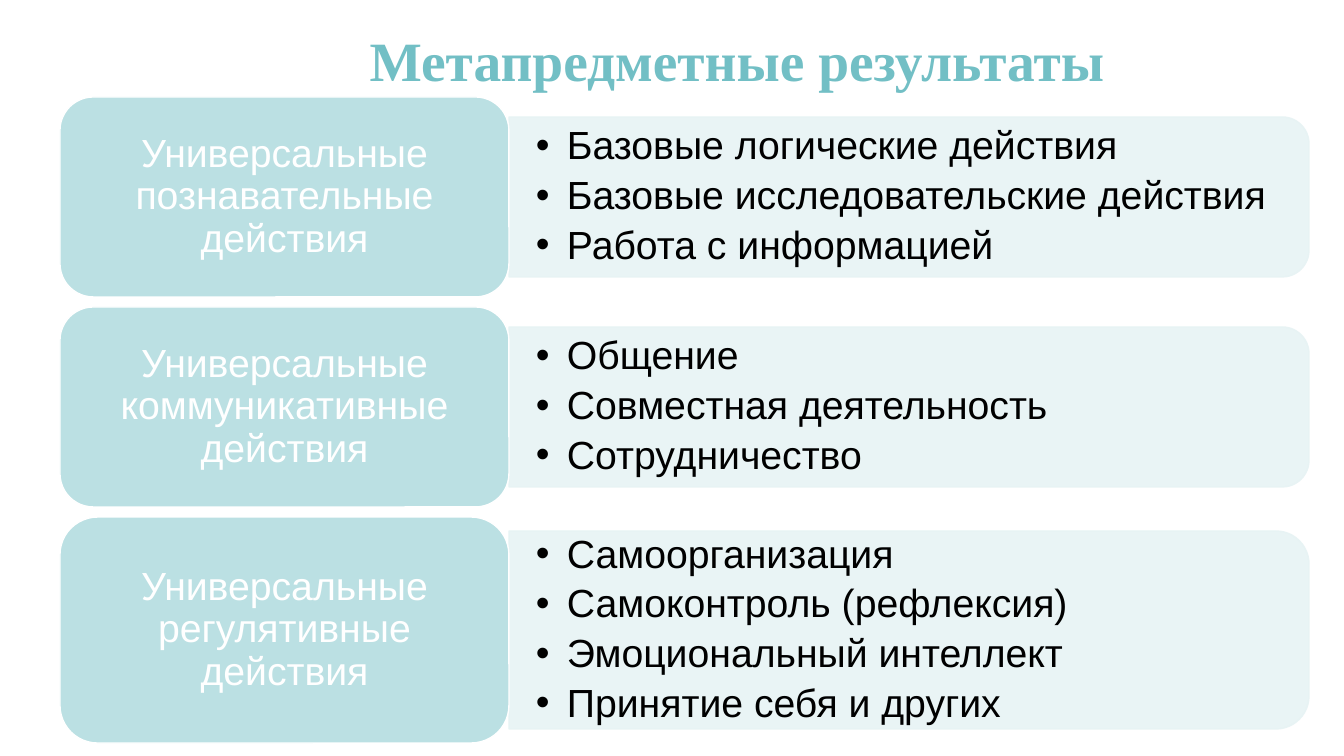
from lxml.etree import SubElement as Sub
from pptx import Presentation
from pptx.dml.color import RGBColor
from pptx.enum.shapes import MSO_SHAPE as Shape
from pptx.enum.text import MSO_ANCHOR as Anchor, MSO_AUTO_SIZE as Fit, PP_ALIGN as Align
from pptx.oxml.ns import qn
from pptx.util import Emu, Pt

SCALE = 12192000 / 1344  # EMU in one px


def px(n):
    return Emu(round(n * SCALE))


def color(code):
    return RGBColor.from_string(code)


class Deck:
    font, size = "Arial", 28
    card_fill, bar_fill = "BBE0E3", "E7F3F4"
    white, black, teal = "FFFFFF", "000000", "72BFC5"

    def __init__(self):
        self.prs = Presentation()
        self.prs.slide_width, self.prs.slide_height = px(1344), px(756)
        self.slide = self.prs.slides.add_slide(self.prs.slide_layouts[5])

    def frame(self, tf, side, edge):
        tf.word_wrap, tf.auto_size = True, Fit.NONE
        tf.vertical_anchor = Anchor.MIDDLE
        tf.margin_left = tf.margin_right = px(side)
        tf.margin_top = tf.margin_bottom = px(edge)
        return tf

    def style(self, par, shade, size=size, name=font, bold=False):
        font = par.font
        font.name, font.size, font.bold = name, Pt(size), bold
        font.color.rgb = color(shade)

    def title(self, text, x, y, w, h):
        box = self.slide.shapes.title
        box.left, box.top, box.width, box.height = map(px, (x, y, w, h))
        tf = self.frame(box.text_frame, 10, 5)
        tf.text = text
        par = tf.paragraphs[0]
        par.alignment = Align.CENTER
        self.style(par, self.teal, 39.6, "Times New Roman", True)

    def block(self, kind, x, y, w, h, fill, line):
        box = self.slide.shapes.add_shape(kind, *map(px, (x, y, w, h)))
        box.shadow.inherit = False
        box.fill.solid()
        box.fill.fore_color.rgb = color(fill)
        box.line.color.rgb = color(line)
        box.line.width = Pt(1)
        return box

    def bar(self, x, mid, w, h):
        # A quarter turn puts the rounded end on the right
        box = self.block(Shape.ROUND_2_SAME_RECTANGLE, x + (w - h) / 2,
                         mid - w / 2, h, w, self.bar_fill, self.bar_fill)
        box.rotation = 90
        for rgb in box._element.spPr.iter(qn("a:srgbClr")):
            Sub(rgb, qn("a:alpha"), val="90000")

    def card(self, text, x, mid, w, h):
        box = self.block(Shape.ROUNDED_RECTANGLE, x, mid - h / 2, w, h,
                         self.card_fill, self.white)
        tf = self.frame(box.text_frame, 12, 6)
        tf.text = text
        par = tf.paragraphs[0]
        par.alignment, par.line_spacing = Align.CENTER, 0.9
        self.style(par, self.white)

    def points(self, items, x, mid, w, h):
        box = self.slide.shapes.add_textbox(*map(px, (x, mid - h / 2, w, h)))
        tf = self.frame(box.text_frame, 27, 14)
        tf.text = "\n".join(items)
        for par in tf.paragraphs:
            par.line_spacing, par.space_after = 0.9, Pt(5.3)
            props = par._p.get_or_add_pPr()
            props.set("marL", str(px(31)))
            props.set("indent", str(-px(31)))
            Sub(props, qn("a:buFont"), typeface=self.font)
            Sub(props, qn("a:buChar"), char="•")
            self.style(par, self.black)


# Each row: middle, card height, bar height, card text, points
ROWS = [
    (197, 200, 160, "Универсальные познавательные действия",
     ["Базовые логические действия", "Базовые исследовательские действия",
      "Работа с информацией"]),
    (407, 200, 160, "Универсальные коммуникативные действия",
     ["Общение", "Совместная деятельность", "Сотрудничество"]),
    (630, 226, 198, "Универсальные регулятивные действия",
     ["Самоорганизация", "Самоконтроль (рефлексия)",
      "Эмоциональный интеллект", "Принятие себя и других"]),
]


def main():
    deck = Deck()
    deck.title("Метапредметные результаты", 164, 39, 1146, 41)
    # Rows of a bar, its points and a card
    for mid, tall, low, name, items in ROWS:
        deck.bar(509, mid, 800, low)
        deck.points(items, 509, mid, 791, low - 18)
        deck.card(name, 60, mid, 449, tall)
    deck.prs.save("out.pptx")


if __name__ == "__main__":
    main()
